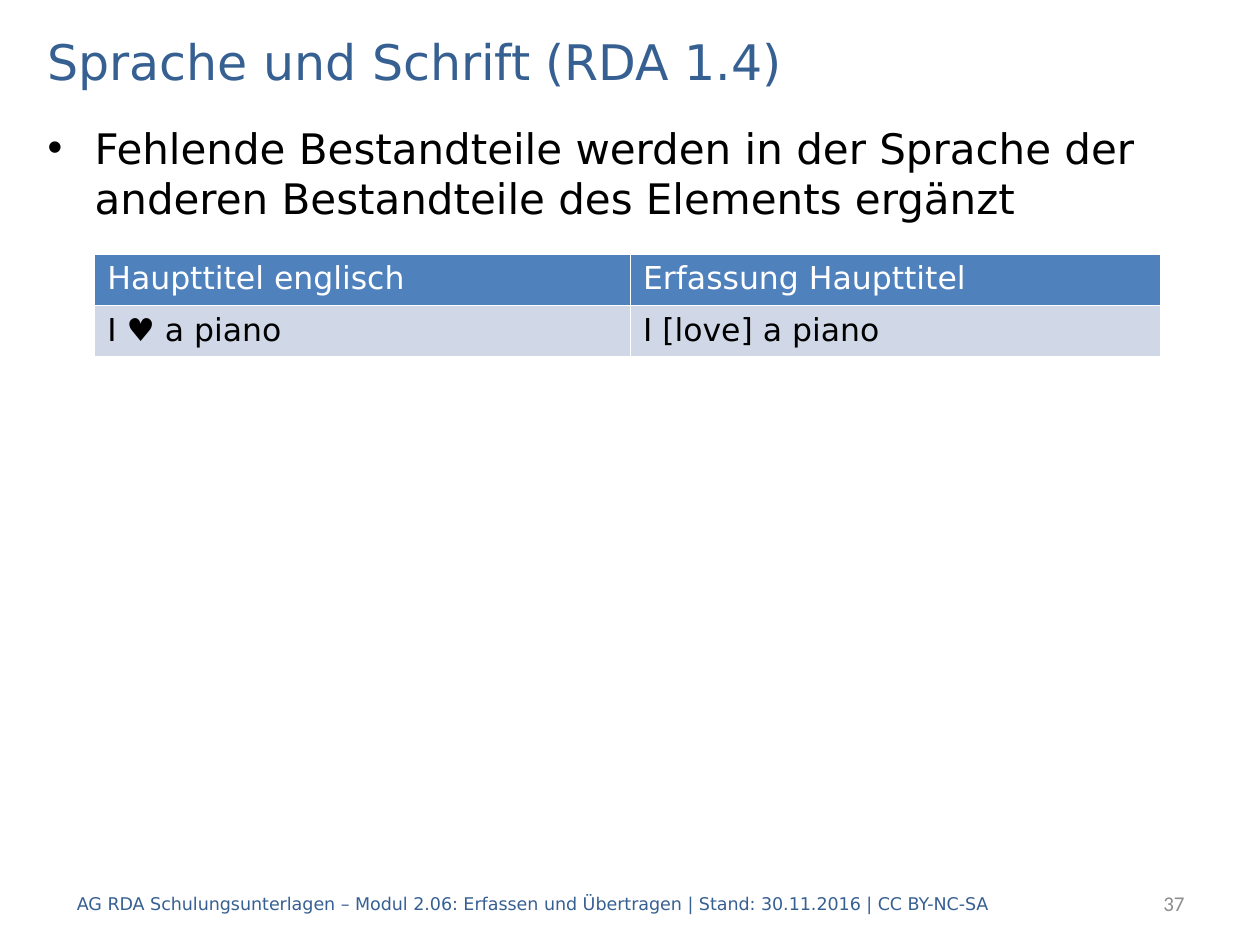
from dataclasses import dataclass

from lxml import etree
from pptx import Presentation
from pptx.dml.color import RGBColor
from pptx.enum.text import MSO_ANCHOR, PP_ALIGN
from pptx.oxml.ns import qn
from pptx.slide import Slide
from pptx.text.text import _Paragraph
from pptx.util import Cm, Pt

LEFT, RIGHT = PP_ALIGN.LEFT, PP_ALIGN.RIGHT
TOP, MIDDLE = MSO_ANCHOR.TOP, MSO_ANCHOR.MIDDLE

BLACK = RGBColor(0x00, 0x00, 0x00)
WHITE = RGBColor(0xFF, 0xFF, 0xFF)
GREY = RGBColor(0x8C, 0x8C, 0x8C)
NAVY = RGBColor(0x37, 0x60, 0x92)
HEADER_BLUE = RGBColor(0x4F, 0x81, 0xBD)
PALE_BLUE = RGBColor(0xD0, 0xD8, 0xE8)

MAIN_FONT = "DejaVu Sans"
NUMBER_FONT = "Calibri"


@dataclass(frozen=True)
class TextStyle:
    size: float
    color: RGBColor
    font: str = MAIN_FONT


@dataclass(frozen=True)
class TextBlock:
    text: str
    left: float
    top: float
    width: float
    height: float
    style: TextStyle
    anchor: MSO_ANCHOR = MIDDLE
    align: PP_ALIGN = LEFT
    bullet: bool = False


@dataclass(frozen=True)
class TableRow:
    texts: tuple[str, ...]
    fill: RGBColor
    style: TextStyle


BLOCKS = (
    TextBlock(
        "Fehlende Bestandteile werden in der Sprache der "
        "anderen Bestandteile des Elements ergänzt",
        0.71, 2.34, 24, 15.19, TextStyle(24, BLACK), anchor=TOP, bullet=True,
    ),
    TextBlock("37", 20.09, 17.7, 4.04, 1.02,
              TextStyle(12, GREY, NUMBER_FONT), align=RIGHT),
    TextBlock("Sprache und Schrift (RDA 1.4)", 0.71, 0.51, 24, 1.42,
              TextStyle(28, NAVY)),
    TextBlock(
        "AG RDA Schulungsunterlagen – Modul 2.06: Erfassen und Übertragen"
        " | Stand: 30.11.2016 | CC BY-NC-SA",
        1.3, 17.7, 21.21, 1.02, TextStyle(10, NAVY),
    ),
)

TABLE_ROWS = (
    TableRow(("Haupttitel englisch", "Erfassung Haupttitel"),
             HEADER_BLUE, TextStyle(18, WHITE)),
    TableRow(("I ♥ a piano", "I [love] a piano"),
             PALE_BLUE, TextStyle(18, BLACK)),
)
COLUMN_WIDTHS = (10.8, 10.7)
ROW_HEIGHT = 1.03


def add_span(para: _Paragraph, text: str, style: TextStyle) -> None:
    span = para.add_run()
    span.text = text
    span.font.name = style.font
    span.font.size = Pt(style.size)
    span.font.bold = False
    span.font.color.rgb = style.color


def add_bullet(para: _Paragraph) -> None:
    indent = Cm(0.95)
    properties = para._p.get_or_add_pPr()
    properties.set("marL", str(indent))
    properties.set("indent", str(-indent))
    etree.SubElement(properties, qn("a:buFont"), typeface="Arial")
    etree.SubElement(properties, qn("a:buChar"), char="•")


def add_block(page: Slide, block: TextBlock) -> None:
    box = page.shapes.add_textbox(
        Cm(block.left), Cm(block.top), Cm(block.width), Cm(block.height))
    frame = box.text_frame
    frame.word_wrap = True
    frame.vertical_anchor = block.anchor
    para = frame.paragraphs[0]
    para.alignment = block.align
    if block.bullet:
        para.space_before = Pt(block.style.size * 0.2)
        add_bullet(para)
    add_span(para, block.text, block.style)


def add_title_table(page: Slide, left: float, top: float) -> None:
    table = page.shapes.add_table(
        len(TABLE_ROWS), len(COLUMN_WIDTHS), Cm(left), Cm(top),
        Cm(sum(COLUMN_WIDTHS)), Cm(ROW_HEIGHT * len(TABLE_ROWS))).table
    for column, width in zip(table.columns, COLUMN_WIDTHS):
        column.width = Cm(width)
    for line, row in zip(table.rows, TABLE_ROWS):
        line.height = Cm(ROW_HEIGHT)
        for cell, text in zip(line.cells, row.texts):
            cell.fill.solid()
            cell.fill.fore_color.rgb = row.fill
            add_span(cell.text_frame.paragraphs[0], text, row.style)


def main() -> None:
    deck = Presentation()
    deck.slide_width, deck.slide_height = Cm(25.4), Cm(19.05)
    page = deck.slides.add_slide(deck.slide_layouts[6])
    for block in BLOCKS:
        add_block(page, block)
    add_title_table(page, 1.91, 5.13)
    deck.save("out.pptx")


if __name__ == "__main__":
    main()
